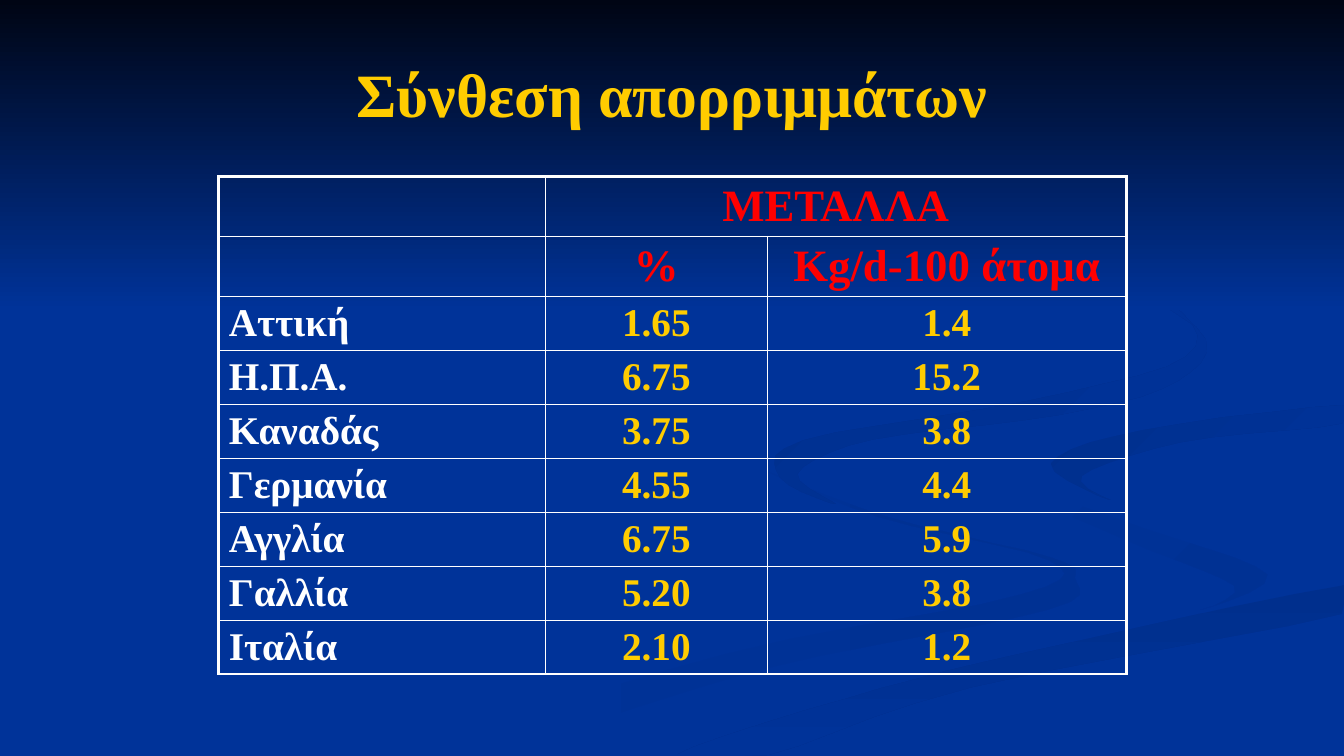
from pptx import Presentation
from pptx.dml.color import RGBColor
from pptx.enum.shapes import MSO_SHAPE as Shape
from pptx.enum.text import MSO_ANCHOR as Anchor, PP_ALIGN as Align
from pptx.oxml import parse_xml
from pptx.oxml.ns import nsdecls
from pptx.util import Inches, Pt

NAVY = RGBColor(0x00, 0x33, 0x99)
DUSK = RGBColor(0x00, 0x31, 0x93)
SHADE = RGBColor(0x00, 0x2F, 0x8D)
NIGHT = RGBColor(0x00, 0x05, 0x14)
GOLD = RGBColor(0xFF, 0xCC, 0x00)
RED = RGBColor(0xFF, 0x00, 0x00)
WHITE = RGBColor(0xFF, 0xFF, 0xFF)

# The slide is a grid of 1333 columns by 750 rows
UNIT = Inches(0.01)
WIDE, HIGH = 1333, 750


def write(frame, text, size, color, align=Align.CENTER):
    para = frame.paragraphs[0]
    para.alignment = align
    run = para.add_run()
    run.text = text
    font = run.font
    font.name, font.size, font.bold = "Times New Roman", Pt(size), True
    font.color.rgb = color


def edge(cell, side, width):
    line = parse_xml(
        f'<a:{side} {nsdecls("a")} w="{Pt(width)}"><a:solidFill>'
        f'<a:srgbClr val="{WHITE}"/></a:solidFill></a:{side}>')
    props = cell._tc.get_or_add_tcPr()
    props.insert(len(props) - 1, line)  # borders come before the fill


deck = Presentation()
deck.slide_width, deck.slide_height = WIDE * UNIT, HIGH * UNIT
slide = deck.slides.add_slide(deck.slide_layouts[5])
slide.background.fill.solid()
slide.background.fill.fore_color.rgb = NAVY

# Ribbons: start colour, end colour, angle, knots of a smooth closed curve
ribbons = [
    (NAVY, DUSK, 0, [
        (1042, 553), (881, 513), (762, 468), (872, 513), (1041, 556),
        (1012, 590), (719, 649), (400, 749), (482, 749), (752, 665),
        (1039, 605), (1066, 573)]),
    (NAVY, DUSK, 45, [
        (1257, 570), (1134, 524), (966, 468), (1117, 536), (1224, 581),
        (1191, 605)]),
    (SHADE, NAVY, 90, [
        (671, 749), (762, 749), (963, 682), (1331, 609), (1331, 581),
        (1019, 647), (840, 693)]),
    (SHADE, NAVY, 45, [
        (1042, 460), (1101, 496), (1073, 472), (1170, 439), (1331, 420),
        (1331, 402), (1132, 427)]),
    (SHADE, NAVY, 45, [
        (1049, 412), (1168, 378), (1186, 324), (1017, 233), (1159, 299),
        (1176, 354), (1018, 398), (796, 437), (774, 474), (829, 500),
        (791, 470), (866, 436)]),
]
STEPS = 5
painted = []
for first, last, angle, knots in ribbons:
    curve = []
    for i in range(len(knots)):
        quad = [knots[(i + k) % len(knots)] for k in (-1, 0, 1, 2)]
        for step in range(STEPS):
            t = step / STEPS
            x, y = (
                b + t / 2 * (c - a + t * (2*a - 5*b + 4*c - d
                                          + t * (3*b - a - 3*c + d)))
                for a, b, c, d in zip(*quad))
            curve.append((min(x, WIDE), min(y, HIGH)))
    path = slide.shapes.build_freeform(*curve[0], scale=UNIT)
    path.add_line_segments(curve[1:], close=True)
    painted.append((path.convert_to_shape(), first, last, angle))

# Dark fade across the top
fade = slide.shapes.add_shape(Shape.RECTANGLE, 0, 0, WIDE * UNIT, 308 * UNIT)
painted.append((fade, NIGHT, NAVY, 90))

for shape, first, last, angle in painted:
    shape.shadow.inherit = False
    shape.line.fill.background()
    shape.fill.gradient()
    shape.fill.gradient_angle = (360 - angle) % 360
    for stop, color in zip(shape.fill.gradient_stops, (first, last)):
        stop.color.rgb = color

# Title, brought in front of the backdrop
title = slide.shapes.title
title.left, title.top = 67 * UNIT, 30 * UNIT
title.width, title.height = 1200 * UNIT, 125 * UNIT
title.text_frame.vertical_anchor = Anchor.MIDDLE
write(title.text_frame, "Σύνθεση απορριμμάτων", 44, GOLD)
slide.shapes._spTree.append(title._element)

# Table
rows = [
    ("", "ΜΕΤΑΛΛΑ", ""),
    ("", "%", "Kg/d-100 άτομα"),
    ("Αττική", "1.65", "1.4"),
    ("Η.Π.Α.", "6.75", "15.2"),
    ("Καναδάς", "3.75", "3.8"),
    ("Γερμανία", "4.55", "4.4"),
    ("Αγγλία", "6.75", "5.9"),
    ("Γαλλία", "5.20", "3.8"),
    ("Ιταλία", "2.10", "1.2"),
]
cols = (324, 220, 356)
heads = 2
tall, rest = 59.5, 375
body = rest / (len(rows) - heads)
table = slide.shapes.add_table(
    len(rows), len(cols), 217 * UNIT, 175 * UNIT, sum(cols) * UNIT,
    int((heads * tall + rest) * UNIT)).table
table.first_row = table.horz_banding = False
for col, width in zip(table.columns, cols):
    col.width = width * UNIT
table.cell(0, 1).merge(table.cell(0, 2))

for r, row in enumerate(rows):
    head = r < heads
    table.rows[r].height = int((tall if head else body) * UNIT)
    for c, text in enumerate(row):
        cell = table.cell(r, c)
        cell.fill.background()
        outer = {
            "lnL": c == 0,
            "lnR": c + cell.span_width == len(cols),
            "lnT": r == 0,
            "lnB": r == len(rows) - 1,
        }
        for side, thick in outer.items():
            edge(cell, side, 2.25 if thick else 1)
        if text:
            color = RED if head else GOLD if c else WHITE
            write(cell.text_frame, text, 32 if head else 28, color,
                  Align.CENTER if c else Align.LEFT)

deck.save("out.pptx")
